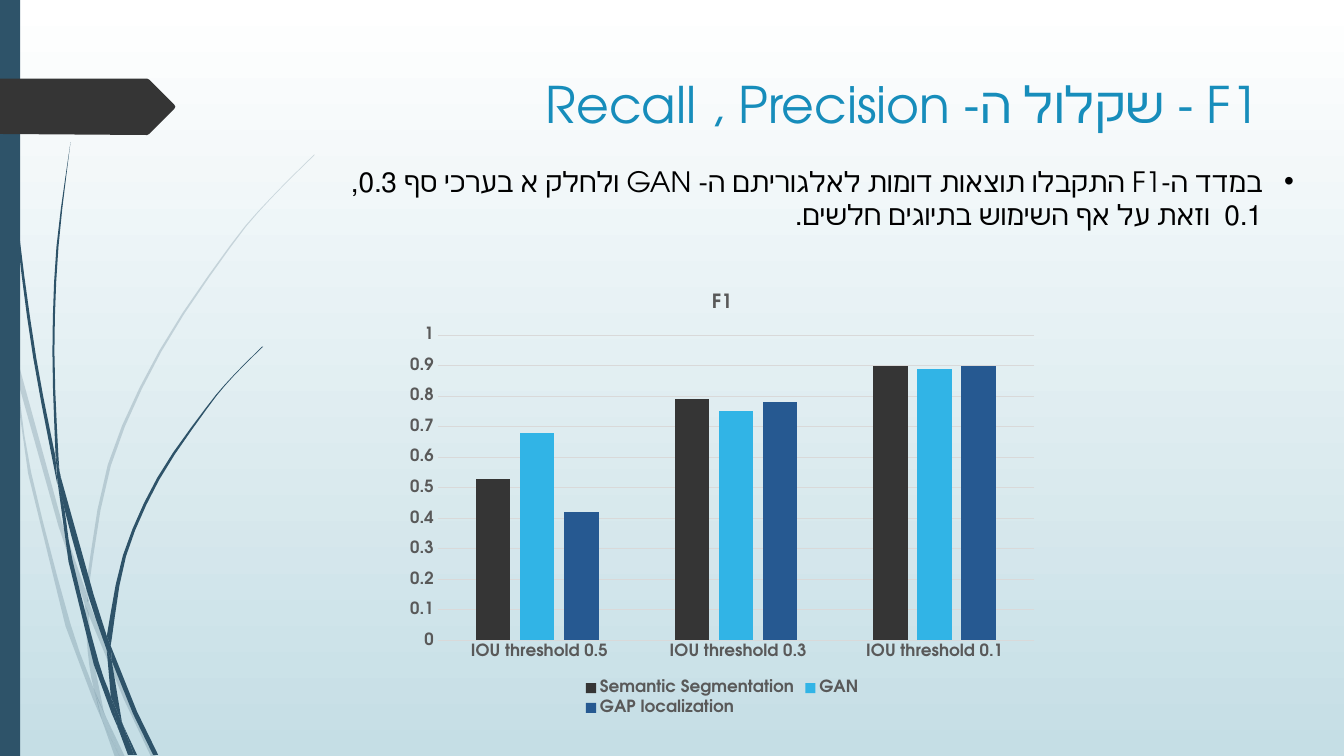
import pptx
import pptx.chart.data
import pptx.dml.color
import pptx.enum.chart
import pptx.enum.shapes
import pptx.enum.text
import pptx.oxml.ns
import pptx.util
from lxml import etree

Cm = pptx.util.Cm
Pt = pptx.util.Pt
RGBColor = pptx.dml.color.RGBColor

FONT = "TeX Gyre Adventor"
WHITE = RGBColor(0xFF, 0xFF, 0xFF)
MIST = RGBColor(0xC5, 0xDE, 0xE5)
TEAL = RGBColor(0x2E, 0x53, 0x69)
CHARCOAL = RGBColor(0x35, 0x35, 0x35)
TITLE_BLUE = RGBColor(0x17, 0x8D, 0xBB)
BLACK = RGBColor(0, 0, 0)
GREY = RGBColor(0x59, 0x59, 0x59)
GRID = RGBColor(0xD9, 0xD9, 0xD9)
SKY = RGBColor(0x31, 0xB4, 0xE6)
NAVY = RGBColor(0x26, 0x59, 0x91)

# Grass pieces: one edge out, the other edge back, in inches
PALE_GRASS = [
    ([(.11, 3.5), (.09, 3.22), (0, 2.82)], [(0, 2.99), (.1, 3.44)]),
    ([(.17, 3.76), (.58, 5.22), (.84, 5.99)],
     [(.85, 5.86), (.62, 5.2), (.14, 3.45)]),
    ([(.88, 5.96), (.92, 6.07), (1.27, 6.92), (1.55, 7.51)],
     [(1.5, 7.51), (1.23, 6.94), (.88, 6.1)]),
    ([(1.19, 7.51), (1.24, 7.51)], [(1.05, 7.11)]),
    ([(.11, 3.5), (.17, 3.76), (.31, 4.69), (.7, 6.19), (.93, 6.83), (1.01, 7.14)],
     [(.92, 6.93), (.65, 6.21), (.28, 4.7)]),
    ([(.84, 5.99), (.87, 6.46), (.93, 6.83), (1.05, 7.11)],
     [(1.03, 7.06), (.91, 6.46), (.88, 6.08)]),
    ([(.88, 5.96), (.88, 5.84), (1.1, 4.62), (1.6, 3.49), (2.29, 2.45), (2.68, 1.98),
      (3.12, 1.54)],
     [(3.12, 1.53), (2.68, 1.97), (2.28, 2.44), (1.58, 3.48), (1.07, 4.61), (.85, 5.84)]),
    ([(1.01, 7.14), (1.14, 7.51)], [(1.19, 7.51)]),
    ([(.88, 6.1), (.88, 5.96)], [(.85, 5.86), (.84, 5.99)]),
    ([(.93, 6.83), (1.05, 7.11), (1.19, 7.51)], [(1.01, 7.14), (.99, 7.07)]),
]
DARK_GRASS = [
    ([(.03, 0), (.07, 1.1), (.17, 2.33), (.33, 3.55), (.57, 4.81)],
     [(.55, 4.53), (.36, 3.55), (.19, 2.32), (.08, 1.09), (.04, 0)]),
    ([(.6, 4.72), (.64, 5.05), (.88, 5.92), (1.06, 6.45)],
     [(1.06, 6.31), (.93, 5.9), (.6, 4.72)]),
    ([(1.1, 6.41), (1.36, 7.06), (1.57, 7.49)], [(1.52, 7.49), (1.32, 7.08), (1.11, 6.56)]),
    ([(.57, 4.77), (.64, 5.05), (.72, 5.56), (.98, 6.57), (1.1, 6.91), (1.17, 7.22)],
     [(1.11, 7.08), (.93, 6.59), (.68, 5.57)]),
    ([(.6, 4.72), (.58, 4.53), (.54, 3.49), (.58, 2.45), (.7, 1.41)],
     [(.7, 1.41), (.56, 2.45), (.52, 3.49), (.55, 4.49)]),
    ([(1.22, 7.19), (1.33, 7.49)], [(1.36, 7.49)]),
    ([(.64, 5.05), (.6, 4.72)], [(.55, 4.49), (.57, 4.77)]),
    ([(1.1, 6.41), (1.11, 6.33), (1.25, 5.52), (1.58, 4.76), (2.05, 4.06), (2.31, 3.74),
      (2.61, 3.44)],
     [(2.6, 3.44), (2.31, 3.73), (2.04, 4.05), (1.56, 4.74), (1.22, 5.51), (1.06, 6.31)]),
    ([(1.17, 7.22), (1.27, 7.49)], [(1.31, 7.49)]),
    ([(1.06, 6.45), (1.1, 6.91), (1.22, 7.19)], [(1.21, 7.16), (1.11, 6.56)]),
    ([(1.06, 6.45), (1.11, 6.56)], [(1.1, 6.41), (1.06, 6.31)]),
    ([(1.1, 6.91), (1.22, 7.19), (1.33, 7.49)], [(1.3, 7.49), (1.17, 7.22)]),
]


def smooth_path(knots, steps=3):
    """Catmull-Rom points through the knots."""
    if len(knots) < 4:
        return knots
    pts = [knots[0]] + knots + [knots[-1]]
    out = []
    for a, b, c, d in zip(pts, pts[1:], pts[2:], pts[3:]):
        for i in range(steps):
            t = i / steps
            out.append(tuple(
                q + t * (r - p) / 2 + t * t * (2 * p - 5 * q + 4 * r - s) / 2
                + t ** 3 * (3 * q - p - 3 * r + s) / 2
                for p, q, r, s in zip(a, b, c, d)))
    return out + [knots[-1]]


def paint(sp, color, alpha=None):
    sp.shadow.inherit = False
    sp.fill.solid()
    sp.fill.fore_color.rgb = color
    sp.line.fill.background()
    if alpha:
        clr = sp.fill._xPr.find(".//" + pptx.oxml.ns.qn("a:srgbClr"))
        etree.SubElement(clr, pptx.oxml.ns.qn("a:alpha"), val=str(alpha * 1000))


def add_outline(slide, points, color, alpha=None):
    pts = [(Cm(2.54 * x), Cm(2.54 * y)) for x, y in points]
    fb = slide.shapes.build_freeform(*pts[0])
    fb.add_line_segments(pts[1:], close=True)
    paint(fb.convert_to_shape(), color, alpha)


def add_grass(slide, pieces, color, alpha=None):
    for out, back in pieces:
        add_outline(slide, smooth_path(out) + smooth_path(back), color, alpha)


def add_rtl_text(slide, box, text, size, color, bullet=False):
    tf = slide.shapes.add_textbox(*map(Cm, box)).text_frame
    tf.word_wrap = True
    tf.vertical_anchor = pptx.enum.text.MSO_ANCHOR.TOP
    p = tf.paragraphs[0]
    p.alignment = pptx.enum.text.PP_ALIGN.RIGHT
    r = p.add_run()
    r.text = text
    set_font(r.font, size, color)
    pPr = p._p.get_or_add_pPr()
    pPr.set("rtl", "1")
    if bullet:
        pPr.set("marL", str(Cm(.79)))
        pPr.set("indent", str(-Cm(.79)))
        etree.SubElement(pPr, pptx.oxml.ns.qn("a:buFont"), typeface="Arial")
        etree.SubElement(pPr, pptx.oxml.ns.qn("a:buChar"), char="•")


def set_font(font, size, color, bold=False):
    font.name = FONT
    font.size = Pt(size)
    font.bold = bold
    font.color.rgb = color


def add_f1_chart(slide):
    data = pptx.chart.data.CategoryChartData()
    data.categories = [" IOU threshold 0.5", " IOU threshold 0.3", "IOU threshold 0.1"]
    data.add_series("Semantic Segmentation", (0.53, 0.79, 0.9))
    data.add_series("GAN", (0.68, 0.75, 0.89))
    data.add_series("GAP localization", (0.42, 0.78, 0.9))
    chart = slide.shapes.add_chart(
        pptx.enum.chart.XL_CHART_TYPE.COLUMN_CLUSTERED,
        Cm(10.01), Cm(6.89), Cm(16.38), Cm(11.25), data).chart
    set_font(chart.font, 12, GREY, True)

    chart.has_title = True
    r = chart.chart_title.text_frame.paragraphs[0].add_run()
    r.text = "F1"
    set_font(r.font, 14, GREY, True)
    chart.chart_title.include_in_layout = False

    chart.has_legend = True
    chart.legend.position = pptx.enum.chart.XL_LEGEND_POSITION.BOTTOM
    chart.legend.include_in_layout = False
    set_font(chart.legend.font, 12, GREY, True)

    cat, val = chart.category_axis, chart.value_axis
    for axis in (cat, val):
        axis.major_tick_mark = pptx.enum.chart.XL_TICK_MARK.NONE
        set_font(axis.tick_labels.font, 12, GREY, True)
    val.minimum_scale, val.maximum_scale, val.major_unit = 0, 1, 0.1
    val.format.line.fill.background()
    for line in (cat.format.line, val.major_gridlines.format.line):
        line.color.rgb = GRID
        line.width = Pt(.75)

    plot = chart.plots[0]
    plot.vary_by_categories = False
    plot.gap_width, plot.overlap = 219, -27
    for series, color in zip(plot.series, (CHARCOAL, SKY, NAVY)):
        series.format.fill.solid()
        series.format.fill.fore_color.rgb = color


def main():
    prs = pptx.Presentation()
    prs.slide_width, prs.slide_height = Cm(33.87), Cm(19.05)
    slide = prs.slides.add_slide(prs.slide_layouts[6])

    # Background
    fill = slide.background.fill
    fill.gradient()
    fill.gradient_angle = 270
    for stop, color in zip(fill.gradient_stops, (WHITE, MIST)):
        stop.color.rgb = color

    # Grass, side bar and arrow tab
    add_grass(slide, PALE_GRASS, TEAL, 20)
    add_grass(slide, DARK_GRASS, TEAL)
    bar = slide.shapes.add_shape(
        pptx.enum.shapes.MSO_SHAPE.RECTANGLE, 0, 0, Cm(.51), prs.slide_height)
    paint(bar, TEAL)
    add_outline(slide, [(0, .78), (1.46, .78), (1.48, .79), (1.73, 1.04), (1.74, 1.06),
                        (1.73, 1.08), (1.48, 1.33), (1.46, 1.34), (0, 1.33)], CHARCOAL)

    # Title, chart and body
    add_rtl_text(slide, (7.21, 1.73, 24.77, 3.56),
                 "F1 - שקלול ה- Recall , Precision", 36, TITLE_BLUE)
    add_f1_chart(slide)
    add_rtl_text(slide, (7.82, 4.01, 25.04, 1.96),
                 "במדד ה-F1 התקבלו תוצאות דומות לאלגוריתם ה- GAN ולחלק א בערכי סף 0.3, "
                 "0.1  וזאת על אף השימוש בתיוגים חלשים.", 20, BLACK, bullet=True)
    prs.save("out.pptx")


if __name__ == "__main__":
    main()
